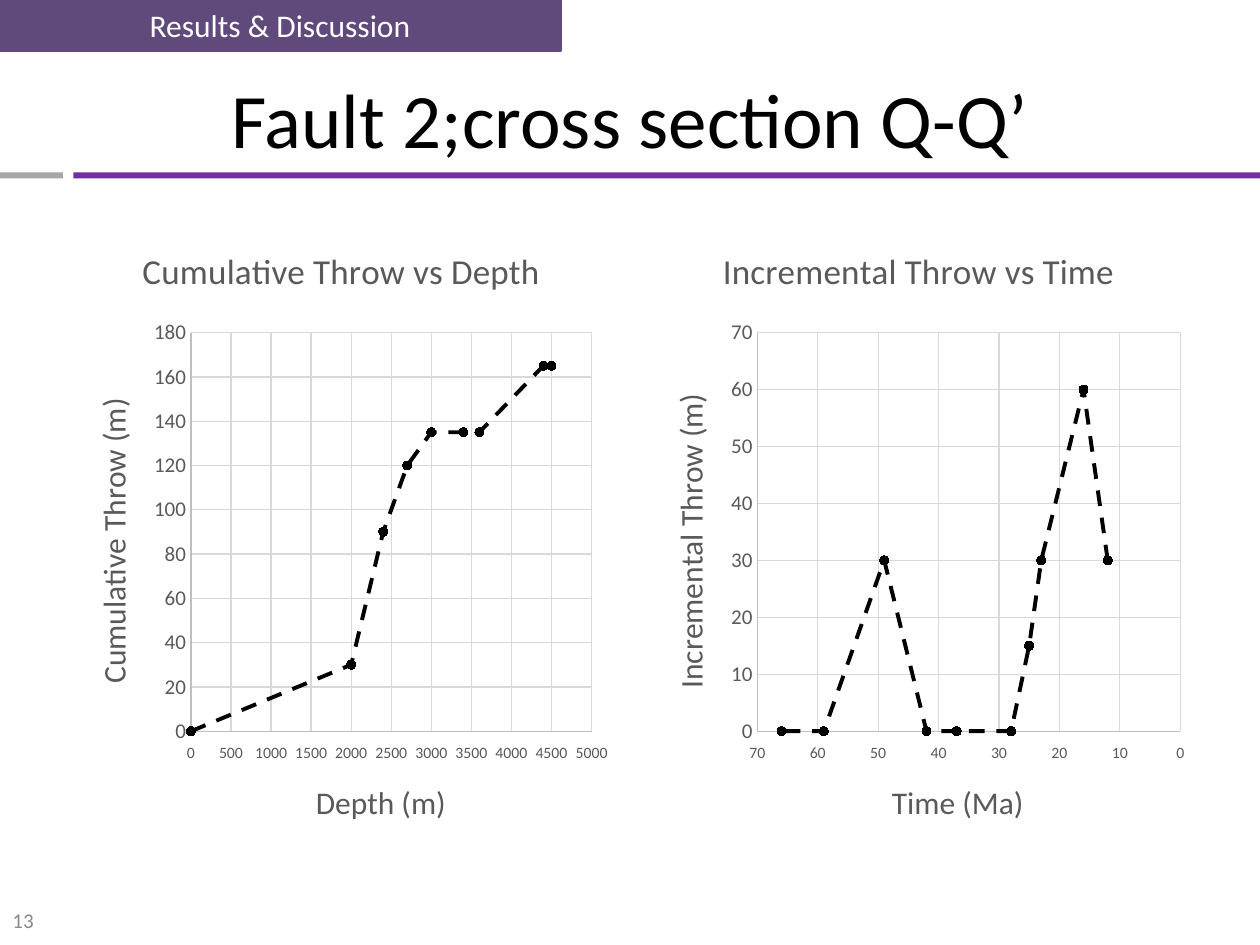
from dataclasses import dataclass

from lxml import etree
from pptx import Presentation
from pptx.chart.data import XyChartData
from pptx.dml.color import RGBColor
from pptx.enum.chart import (XL_AXIS_CROSSES, XL_CHART_TYPE, XL_MARKER_STYLE,
                             XL_TICK_LABEL_POSITION, XL_TICK_MARK)
from pptx.enum.dml import MSO_LINE
from pptx.enum.shapes import MSO_SHAPE
from pptx.enum.text import MSO_ANCHOR, PP_ALIGN
from pptx.oxml.ns import qn
from pptx.util import Pt

SCATTER = XL_CHART_TYPE.XY_SCATTER_LINES
CIRCLE = XL_MARKER_STYLE.CIRCLE
NO_TICK = XL_TICK_MARK.NONE
LOW_LABELS = XL_TICK_LABEL_POSITION.LOW
AT_MAXIMUM = XL_AXIS_CROSSES.MAXIMUM
DASH = MSO_LINE.DASH
RECTANGLE = MSO_SHAPE.RECTANGLE
MIDDLE = MSO_ANCHOR.MIDDLE
LEFT, CENTER = PP_ALIGN.LEFT, PP_ALIGN.CENTER


@dataclass(frozen=True)
class Theme:
    font: str = "Calibri"
    black: RGBColor = RGBColor(0, 0, 0)
    white: RGBColor = RGBColor(255, 255, 255)
    tab: RGBColor = RGBColor(0x60, 0x4A, 0x7B)
    rule: RGBColor = RGBColor(0x70, 0x30, 0xA0)
    rule_stub: RGBColor = RGBColor(0xA6, 0xA6, 0xA6)
    number: RGBColor = RGBColor(0x89, 0x89, 0x89)
    label: RGBColor = RGBColor(0x59, 0x59, 0x59)
    axis: RGBColor = RGBColor(0xBF, 0xBF, 0xBF)
    grid: RGBColor = RGBColor(0xD9, 0xD9, 0xD9)
    title_size: int = 44
    tab_size: int = 18
    number_size: int = 12
    chart_title_size: int = 20
    axis_title_size: int = 18
    x_label_size: int = 9
    y_label_size: int = 12


THEME = Theme()


@dataclass(frozen=True)
class Axis:
    title: str
    maximum: int
    step: int
    reverse: bool = False


@dataclass(frozen=True)
class Plot:
    title: str
    x_axis: Axis
    y_axis: Axis
    points: tuple
    area: tuple  # x, y, width, height as fractions of the chart


DEPTH_PLOT = Plot(
    "Cumulative Throw vs Depth",
    Axis("Depth (m)", 5000, 500), Axis("Cumulative Throw (m)", 180, 20),
    ((0, 0), (2000, 30), (2400, 90), (2700, 120), (3000, 135),
     (3400, 135), (3400, 135), (3600, 135), (4400, 165), (4500, 165)),
    (0.23, 0.18, 0.72, 0.64))
TIME_PLOT = Plot(
    "Incremental Throw vs Time",
    Axis("Time (Ma)", 70, 10, reverse=True), Axis("Incremental Throw (m)", 70, 10),
    ((12, 30), (16, 60), (23, 30), (25, 15), (28, 0),
     (37, 0), (42, 0), (49, 30), (59, 0), (66, 0)),
    (0.21, 0.18, 0.76, 0.64))


def points(box):
    return [Pt(length) for length in box]


def write(text_frame, text, size, color, align=None):
    paragraph = text_frame.paragraphs[0]
    paragraph.alignment = align
    run = paragraph.add_run()
    run.text = text
    run.font.name = THEME.font
    run.font.size = Pt(size)
    run.font.bold = False
    run.font.color.rgb = color


def add_text(slide, box, text, size, color, align):
    text_frame = slide.shapes.add_textbox(*points(box)).text_frame
    text_frame.word_wrap = True
    text_frame.vertical_anchor = MIDDLE
    write(text_frame, text, size, color, align)


def add_bar(shapes, box, color):
    bar = shapes.add_shape(RECTANGLE, *points(box))
    bar.shadow.inherit = False
    bar.fill.solid()
    bar.fill.fore_color.rgb = color
    bar.line.fill.background()
    return bar


def add_section_tab(slide, box, text):
    tab = add_bar(slide.shapes, box, THEME.tab)
    tab.line.color.rgb = THEME.tab
    tab.line.width = Pt(2)
    tab.text_frame.vertical_anchor = MIDDLE
    write(tab.text_frame, text, THEME.tab_size, THEME.white, CENTER)


def add_rule(slide, box, stub=36, gap=6):
    """Draw the two-coloured rule below the title."""
    left, top, width, height = box
    group = slide.shapes.add_group_shape()
    add_bar(group.shapes, (left, top, stub, height), THEME.rule_stub)
    start = stub + gap
    add_bar(group.shapes, (left + start, top, width - start, height), THEME.rule)


def style_axis(axis, settings, label_size):
    axis.minimum_scale = 0
    axis.maximum_scale = settings.maximum
    axis.major_unit = settings.step
    axis.reverse_order = settings.reverse
    axis.major_tick_mark = axis.minor_tick_mark = NO_TICK
    axis.has_major_gridlines = True
    for line, color in ((axis.format.line, THEME.axis),
                        (axis.major_gridlines.format.line, THEME.grid)):
        line.color.rgb = color
        line.width = Pt(0.75)
    font = axis.tick_labels.font
    font.name = THEME.font
    font.size = Pt(label_size)
    font.color.rgb = THEME.label
    write(axis.axis_title.text_frame, settings.title, THEME.axis_title_size, THEME.label)


def set_plot_area(chart, fractions):
    """Fix the inner plot area."""
    plot_area = chart._chartSpace.chart.plotArea
    for old_layout in plot_area.findall(qn("c:layout")):
        plot_area.remove(old_layout)
    layout = etree.Element(qn("c:layout"))
    plot_area.insert(0, layout)
    manual = etree.SubElement(layout, qn("c:manualLayout"))
    settings = [("layoutTarget", "inner"), ("xMode", "edge"), ("yMode", "edge")]
    for name, value in settings + list(zip("xywh", fractions)):
        etree.SubElement(manual, qn(f"c:{name}")).set("val", str(value))


def add_scatter(slide, box, plot):
    data = XyChartData()
    series_data = data.add_series(plot.title)
    for x, y in plot.points:
        series_data.add_data_point(x, y)
    chart = slide.shapes.add_chart(SCATTER, *points(box), data).chart
    chart.font.name = THEME.font
    chart.font.size = Pt(10)
    chart.font.color.rgb = THEME.black
    chart.has_legend = False
    chart.plots[0].vary_by_categories = False
    write(chart.chart_title.text_frame, plot.title, THEME.chart_title_size, THEME.label)
    chart.chart_title.include_in_layout = False
    style_axis(chart.category_axis, plot.x_axis, THEME.x_label_size)
    style_axis(chart.value_axis, plot.y_axis, THEME.y_label_size)
    chart.category_axis.tick_label_position = LOW_LABELS
    if plot.x_axis.reverse:
        chart.category_axis.crosses = AT_MAXIMUM
    series = chart.plots[0].series[0]
    series.smooth = False
    series.format.line.color.rgb = THEME.black
    series.format.line.width = Pt(2.25)
    series.format.line.dash_style = DASH
    series.marker.style = CIRCLE
    series.marker.size = 5
    series.marker.format.fill.solid()
    series.marker.format.fill.fore_color.rgb = THEME.black
    series.marker.format.line.color.rgb = THEME.black
    set_plot_area(chart, plot.area)


def add_scatter_row(slide, box, plots, gap=12):
    left, top, width, height = box
    chart_width = (width - gap * (len(plots) - 1)) / len(plots)
    for index, plot in enumerate(plots):
        chart_left = left + index * (chart_width + gap)
        add_scatter(slide, (chart_left, top, chart_width, height), plot)


def main():
    presentation = Presentation()
    presentation.slide_width, presentation.slide_height = Pt(720), Pt(540)
    slide = presentation.slides.add_slide(presentation.slide_layouts[6])
    add_text(slide, (0, 511, 168, 29), "13", THEME.number_size, THEME.number, LEFT)
    add_text(slide, (36, 22, 648, 90), "Fault 2;cross section Q-Q’",
             THEME.title_size, THEME.black, CENTER)
    add_rule(slide, (0, 98.5, 720, 3.5))
    add_scatter_row(slide, (36, 126, 648, 356), (DEPTH_PLOT, TIME_PLOT))
    add_section_tab(slide, (0, 0, 320, 29), "Results & Discussion")
    presentation.save("out.pptx")


if __name__ == "__main__":
    main()
